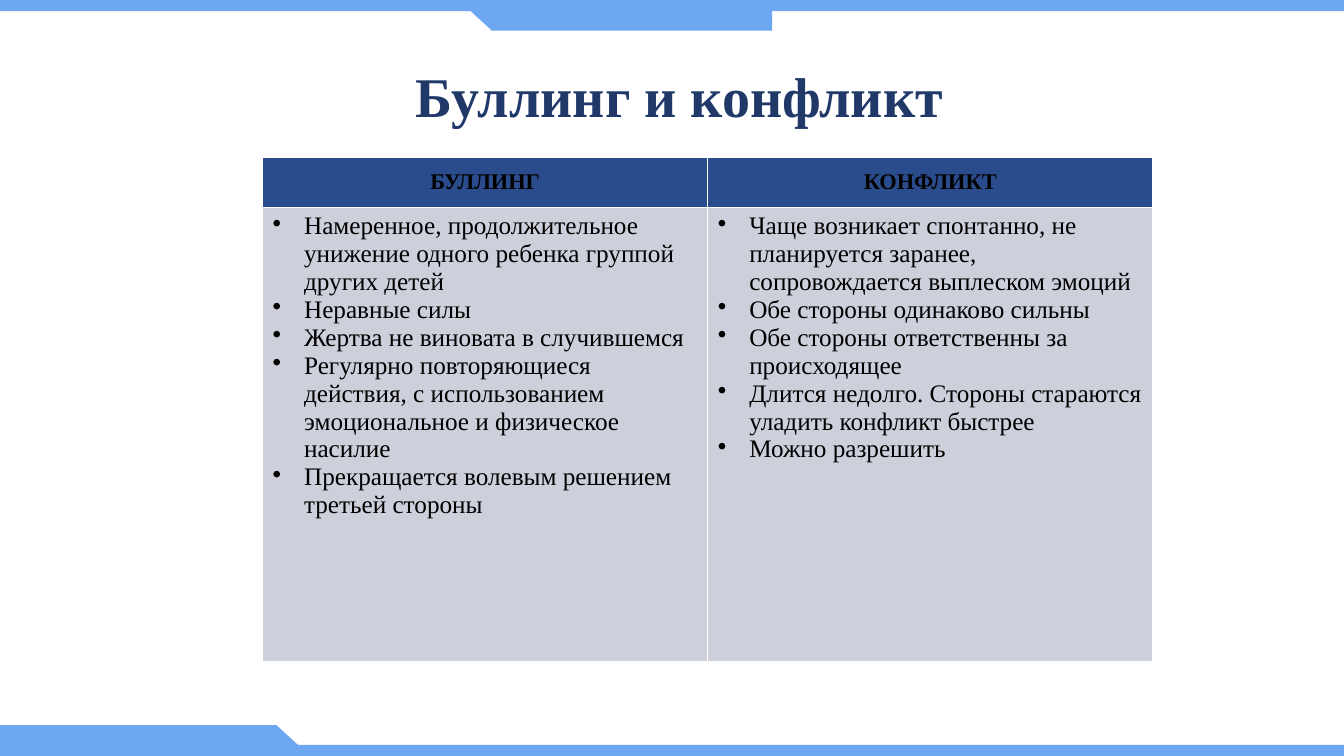
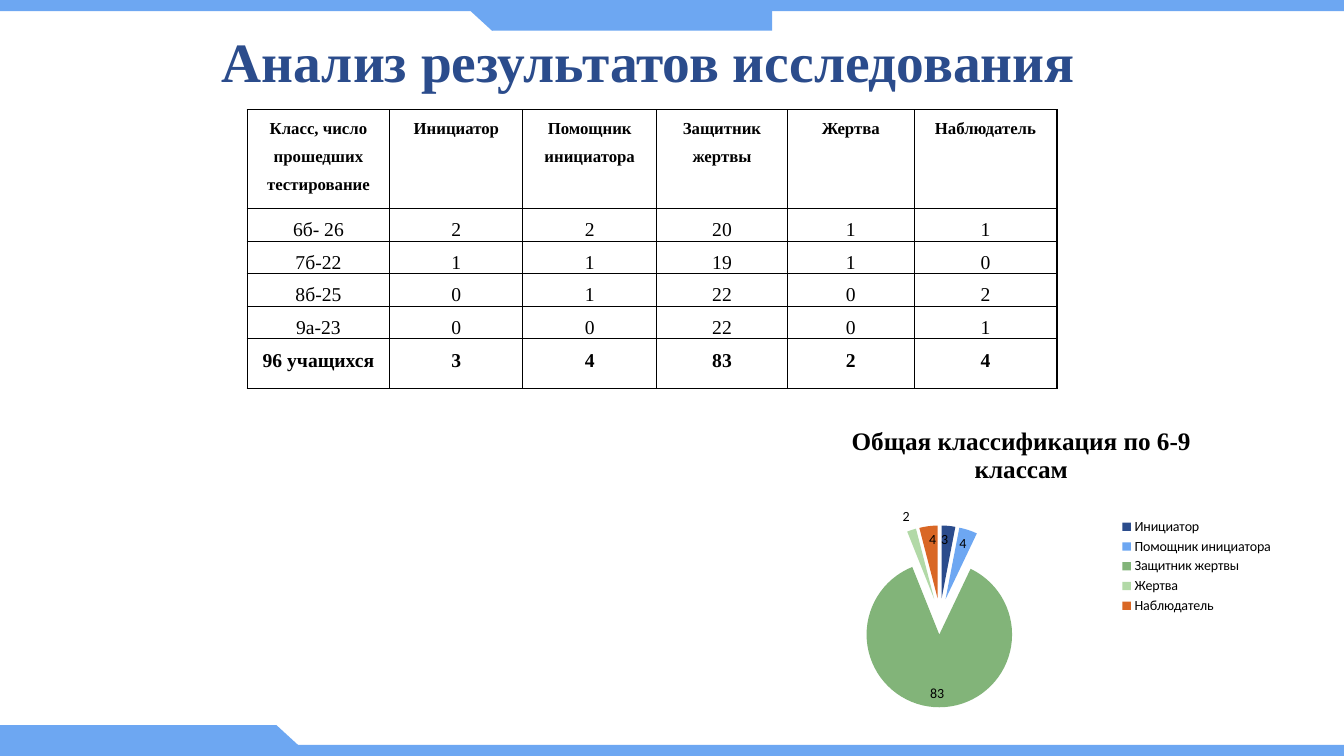
from lxml import etree
from pptx import Presentation
from pptx.chart.data import CategoryChartData
from pptx.dml.color import RGBColor
from pptx.enum.chart import XL_CHART_TYPE, XL_LABEL_POSITION, XL_LEGEND_POSITION
from pptx.enum.shapes import MSO_SHAPE
from pptx.enum.text import MSO_ANCHOR, MSO_AUTO_SIZE, PP_ALIGN
from pptx.oxml import parse_xml
from pptx.oxml.ns import nsdecls, qn
from pptx.util import Pt

RECT, MERGE = MSO_SHAPE.RECTANGLE, MSO_SHAPE.FLOWCHART_MERGE
CENTER, MIDDLE = PP_ALIGN.CENTER, MSO_ANCHOR.MIDDLE
PIE, LEGEND_RIGHT = XL_CHART_TYPE.PIE, XL_LEGEND_POSITION.RIGHT
INSIDE, OUTSIDE = XL_LABEL_POSITION.INSIDE_END, XL_LABEL_POSITION.OUTSIDE_END

W, H = 960, 540
SERIF, SANS = "Times New Roman", "Calibri"
NAVY, BLUE, SKY = "203969", "2B4C8C", "6DA7F2"
GREEN, MINT, ORANGE = "82B479", "B2D9A7", "D96725"
GRAY, BLACK, WHITE = "CDD0DA", "000000", "FFFFFF"


def rgb(value):
    return RGBColor.from_string(value)


def set_font(font, color=BLACK, **formats):
    for name, value in {"name": SERIF, "bold": False, **formats}.items():
        setattr(font, name, value)
    font.color.rgb = rgb(color)


def add_band(s, kind, x, y, w, h, rotation=0):
    sp = s.shapes.add_shape(kind, Pt(x), Pt(y), Pt(w), Pt(h))
    sp.shadow.inherit = False
    sp.fill.solid()
    sp.fill.fore_color.rgb = rgb(SKY)
    sp.line.fill.background()
    sp.rotation = rotation
    return sp


def add_master_bands(prs, s):
    """Draw the edge bands and move them behind the master's placeholders."""
    bar, tab, slant = 8, 22, 48
    bands = [
        add_band(s, RECT, 0, 0, W, bar),
        add_band(s, RECT, 0, H - bar, W, bar),
        add_band(s, RECT, 351.5, 0, 200, tab),
        add_band(s, MERGE, 327.5, 0, slant, tab),
        add_band(s, RECT, 0, H - tab, 197.5, tab),
        add_band(s, MERGE, 173.5, H - tab, slant, tab, 180),
    ]
    tree = prs.slide_master.shapes.element
    for i, sp in enumerate(bands):
        tree.insert(2 + i, sp.element)


def set_title(s, text, box, color, size):
    title = s.shapes.title
    title.left, title.top, title.width, title.height = map(Pt, box)
    tf = title.text_frame
    tf.word_wrap, tf.auto_size = True, MSO_AUTO_SIZE.NONE
    tf.vertical_anchor = MIDDLE
    p = tf.paragraphs[0]
    p.alignment, p.line_spacing = CENTER, 0.9
    r = p.add_run()
    r.text = text
    set_font(r.font, color, size=Pt(size), bold=True)


def add_table(s, x, y, widths, heights):
    table = s.shapes.add_table(len(heights), len(widths), Pt(x), Pt(y),
                               Pt(sum(widths)), Pt(sum(heights))).table
    table.first_row = table.horz_banding = False
    for column, width in zip(table.columns, widths):
        column.width = Pt(width)
    for row, height in zip(table.rows, heights):
        row.height = Pt(height)
    return table


def style_cell(cell, border, fill=None):
    if fill:
        cell.fill.solid()
        cell.fill.fore_color.rgb = rgb(fill)
    else:
        cell.fill.background()
    tcPr = cell._tc.get_or_add_tcPr()
    for i, side in enumerate(("lnL", "lnR", "lnT", "lnB")):
        tcPr.insert(i, parse_xml(
            f'<a:{side} {nsdecls("a")} w="{Pt(1)}"><a:solidFill>'
            f'<a:srgbClr val="{border}"/></a:solidFill></a:{side}>'))


def fill_centered(cell, text, size, bold):
    cell.margin_left = cell.margin_right = Pt(5)
    cell.margin_top = cell.margin_bottom = 0
    p = cell.text_frame.paragraphs[0]
    p.alignment, p.line_spacing = CENTER, 1.5
    r = p.add_run()
    r.text = text
    set_font(r.font, size=Pt(size), bold=bold)


def fill_bullets(cell, items):
    tf = cell.text_frame
    for i, item in enumerate(items):
        p = tf.add_paragraph() if i else tf.paragraphs[0]
        pPr = p._p.get_or_add_pPr()
        pPr.set("marL", str(Pt(22.5)))
        pPr.set("indent", str(-Pt(22.5)))
        etree.SubElement(pPr, qn("a:buChar")).set("char", "•")
        r = p.add_run()
        r.text = item
        set_font(r.font, size=Pt(18))


def add_comparison(s, x, y, w, h, columns):
    head = 35.5
    table = add_table(s, x, y, [w / len(columns)] * len(columns),
                      [head, h - head])
    for c, (name, items) in enumerate(columns.items()):
        style_cell(table.cell(0, c), WHITE, BLUE)
        fill_centered(table.cell(0, c), name, 16, True)
        style_cell(table.cell(1, c), WHITE, GRAY)
        fill_bullets(table.cell(1, c), items)


def add_results(s, x, y, widths, rows):
    last = len(rows) - 1
    table = add_table(s, x, y, widths, [70.5] + [21.5] * (last - 1) + [35.5])
    for i, row in enumerate(rows):
        for c, text in enumerate(row):
            style_cell(table.cell(i, c), BLACK)
            fill_centered(table.cell(i, c), text, 14 if i else 12,
                          i in (0, last))


def add_pie(s, x, y, w, h, title, slices):
    data = CategoryChartData()
    data.categories = [name for name, *_ in slices]
    data.add_series("Series 1", [value for _, value, *_ in slices])
    chart = s.shapes.add_chart(PIE, Pt(x), Pt(y), Pt(w), Pt(h), data).chart
    set_font(chart.font, name=SANS, size=Pt(10))

    # Title and legend
    chart.has_title = True
    r = chart.chart_title.text_frame.paragraphs[0].add_run()
    r.text = title
    set_font(r.font, size=Pt(18), bold=True)
    chart.has_legend = True
    chart.legend.position = LEGEND_RIGHT
    chart.legend.include_in_layout = False

    # Exploded slices with their labels
    plot = chart.plots[0]
    plot.vary_by_categories = True
    series = plot.series[0]
    series._element.find(qn("c:tx")).addnext(
        parse_xml(f'<c:explosion {nsdecls("c")} val="25"/>'))
    labels = series.data_labels
    labels.show_value, labels.position = True, INSIDE
    for i, (_, value, label, color, position) in enumerate(slices):
        point = series.points[i]
        point.format.fill.solid()
        point.format.fill.fore_color.rgb = rgb(color)
        if label != str(value):
            point.data_label.text_frame.text = label
        point.data_label.position = position

    # Plot area within the chart
    area = chart._chartSpace.find(".//" + qn("c:plotArea"))
    for old in area.findall(qn("c:layout")):
        area.remove(old)
    places = {"xMode": "edge", "yMode": "edge",
              "x": 0.17, "y": 0.37, "w": 0.35, "h": 0.58}
    tags = "".join(f'<c:{k} val="{v}"/>' for k, v in places.items())
    area.insert(0, parse_xml(
        f'<c:layout {nsdecls("c")}><c:manualLayout>'
        f'<c:layoutTarget val="inner"/>{tags}</c:manualLayout></c:layout>'))


COMPARISON = {
    "БУЛЛИНГ": [
        "Намеренное, продолжительное унижение одного ребенка группой других детей",
        "Неравные силы",
        "Жертва не виновата в случившемся",
        "Регулярно повторяющиеся действия, с использованием эмоциональное и "
        "физическое насилие",
        "Прекращается волевым решением третьей стороны",
    ],
    "КОНФЛИКТ": [
        "Чаще возникает спонтанно, не планируется заранее, сопровождается "
        "выплеском эмоций",
        "Обе стороны одинаково сильны",
        "Обе стороны ответственны за происходящее",
        "Длится недолго. Стороны стараются уладить конфликт быстрее",
        "Можно разрешить",
    ],
}
ROLES = ["Инициатор", "Помощник инициатора", "Защитник жертвы", "Жертва",
         "Наблюдатель"]
RESULTS = [
    ["Класс, число прошедших тестирование", *ROLES],
    ["6б- 26", "2", "2", "20", "1", "1"],
    ["7б-22", "1", "1", "19", "1", "0"],
    ["8б-25", "0", "1", "22", "0", "2"],
    ["9а-23", "0", "0", "22", "0", "1"],
    ["96 учащихся", "3", "4", "83", "2", "4"],
]
SLICES = list(zip(ROLES, [3, 4, 86, 2, 4], RESULTS[-1][1:],
                  [BLUE, SKY, GREEN, MINT, ORANGE],
                  [INSIDE, INSIDE, INSIDE, OUTSIDE, INSIDE]))


def main():
    prs = Presentation()
    prs.slide_width, prs.slide_height = Pt(W), Pt(H)
    layout = prs.slide_layouts[5]

    # Bullying compared with conflict
    s = prs.slides.add_slide(layout)
    add_master_bands(prs, s)
    set_title(s, "Буллинг и конфликт", (271.5, 34, 427.5, 74), NAVY, 40)
    add_comparison(s, 187.5, 112.5, 636, 360, COMPARISON)

    # Survey results
    s = prs.slides.add_slide(layout)
    set_title(s, "Анализ результатов исследования", (52.5, 14, 821.5, 63.5),
              BLUE, 39.6)
    add_results(s, 176.5, 78.5, [102, 95, 95.5, 93.5, 90.5, 102], RESULTS)
    add_pie(s, 542, 292.5, 375, 224, "Общая классификация по 6-9 классам",
            SLICES)

    prs.save("out.pptx")


if __name__ == "__main__":
    main()
